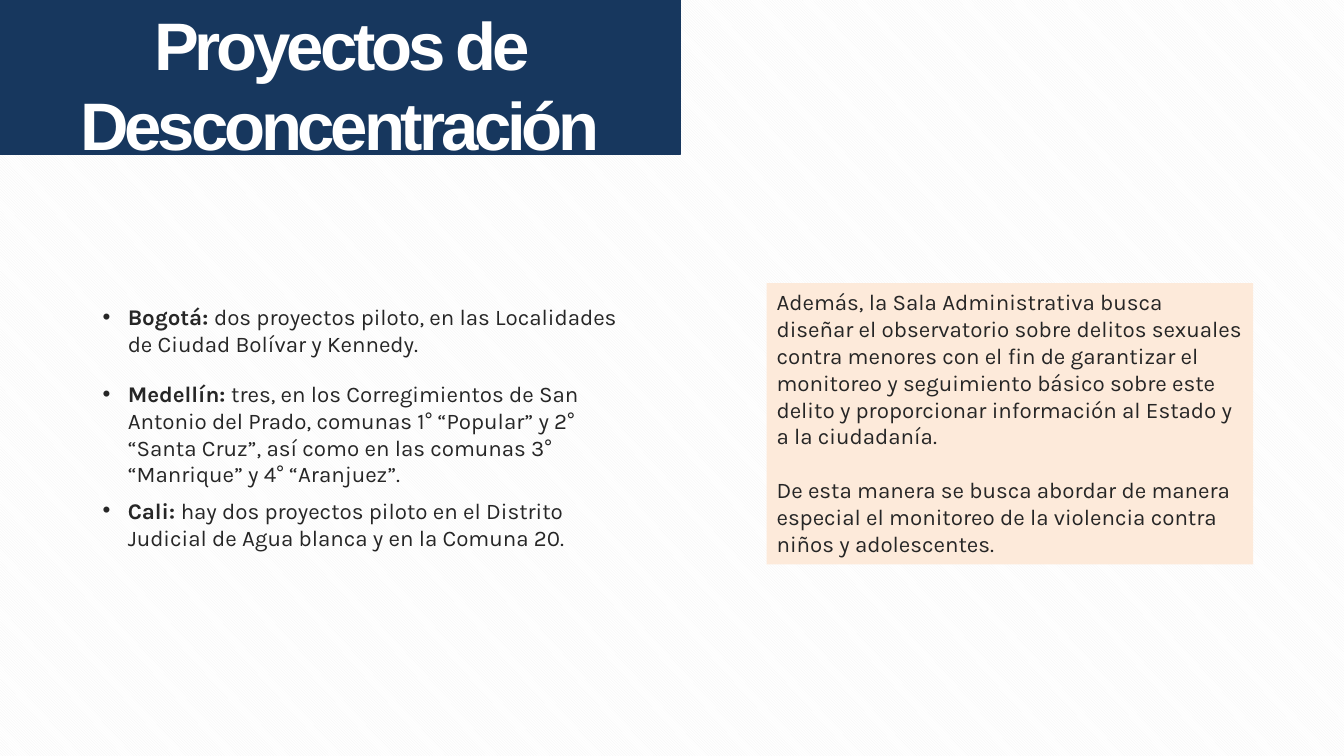
from lxml.etree import SubElement
from pptx import Presentation
from pptx.dml.color import RGBColor
from pptx.enum.dml import MSO_PATTERN
from pptx.enum.shapes import MSO_SHAPE
from pptx.enum.text import MSO_ANCHOR, PP_ALIGN
from pptx.oxml.ns import qn
from pptx.util import Emu, Pt

PX = 9144  # 100 px to the inch
NAVY, PEACH, INK, WHITE, PALE = "17375E", "FDEADA", "262626", "FFFFFF", "F2F2F2"

CITIES = [
    (296, 64, "Bogotá: ",
     "dos proyectos piloto, en las Localidades de Ciudad Bolívar y Kennedy."),
    (372, 145, "Medellín: ",
     "tres, en los Corregimientos de San Antonio del Prado, comunas 1° “Popular” y 2° "
     "“Santa Cruz”, así como en las comunas 3° “Manrique” y 4° “Aranjuez”."),
    (488, 64, "Cali: ",
     "hay dos proyectos piloto en el Distrito Judicial de Agua blanca y en la Comuna 20."),
]
OBSERVATORY = [
    "Además, la Sala Administrativa busca diseñar el observatorio sobre delitos sexuales "
    "contra menores con el fin de garantizar el monitoreo y seguimiento básico sobre este "
    "delito y proporcionar información al Estado y a la ciudadanía.",
    "De esta manera se busca abordar de manera especial el monitoreo de la violencia "
    "contra niños y adolescentes.",
]


def px(length):
    return Emu(length * PX)


def color(hex_code):
    return RGBColor.from_string(hex_code)


class ProjectSlide:
    body_font, body_size = "Karla", 16
    title_font, title_size = "Arial", 48

    def __init__(self, presentation):
        self.slide = presentation.slides.add_slide(presentation.slide_layouts[6])

    def background(self, stripes, base):
        fill = self.slide.background.fill
        fill.patterned()
        fill.pattern = MSO_PATTERN.LIGHT_DOWNWARD_DIAGONAL
        fill.fore_color.rgb = color(stripes)
        fill.back_color.rgb = color(base)

    def frame(self, shape, side=10, top=5):
        """Prepare a shape's text area: wrapped, top-anchored, with px insets."""
        area = shape.text_frame
        area.word_wrap = True
        area.vertical_anchor = MSO_ANCHOR.TOP
        area.margin_left = area.margin_right = px(side)
        area.margin_top = area.margin_bottom = px(top)
        return area

    def panel(self, left, top, width, height, fill):
        panel = self.slide.shapes.add_shape(
            MSO_SHAPE.RECTANGLE, px(left), px(top), px(width), px(height))
        panel.shadow.inherit = False
        panel.fill.solid()
        panel.fill.fore_color.rgb = color(fill)
        panel.line.fill.background()
        return panel

    def style(self, paragraph, name, size, ink):
        font = paragraph.font
        font.name, font.size = name, Pt(size)
        font.color.rgb = color(ink)

    def title(self, left, top, width, height, text):
        banner = self.panel(left, top, width, height, NAVY)
        banner.line.color.rgb = color(NAVY)
        banner.line.width = Pt(0.75)
        heading = self.frame(banner, 13, 4).paragraphs[0]
        heading.alignment = PP_ALIGN.CENTER
        self.style(heading, self.title_font, self.title_size, WHITE)
        heading.font.bold = True
        run = heading.add_run()
        run.text = text
        run._r.get_or_add_rPr().set("spc", "-300")

    def bullet(self, left, top, width, height, city, detail):
        box = self.slide.shapes.add_textbox(px(left), px(top), px(width), px(height))
        item = self.frame(box).paragraphs[0]
        properties = item._p.get_or_add_pPr()
        properties.set("marL", str(px(25)))
        properties.set("indent", str(px(-25)))
        SubElement(properties, qn("a:buFont"), typeface="Arial")
        SubElement(properties, qn("a:buChar"), char="•")
        self.style(item, self.body_font, self.body_size, INK)
        for text, bold in ((city, True), (detail, False)):
            run = item.add_run()
            run.text = text
            run.font.bold = bold

    def note(self, left, top, width, height, texts):
        area = self.frame(self.panel(left, top, width, height, PEACH))
        for index, text in enumerate(texts):
            paragraph = area.add_paragraph() if index else area.paragraphs[0]
            paragraph.text = text
            paragraph.alignment = PP_ALIGN.LEFT
            if index:
                paragraph.space_before = Pt(19)
            self.style(paragraph, self.body_font, self.body_size, INK)


def main():
    presentation = Presentation()
    presentation.slide_width, presentation.slide_height = px(1334), px(750)
    page = ProjectSlide(presentation)
    page.background(PALE, WHITE)
    page.title(0, -1, 675, 154, "Proyectos de Desconcentración")
    for top, height, city, detail in CITIES:
        page.bullet(92, top, 546, height, city, detail)
    page.note(761, 281, 483, 279, OBSERVATORY)
    presentation.save("out.pptx")


if __name__ == "__main__":
    main()
